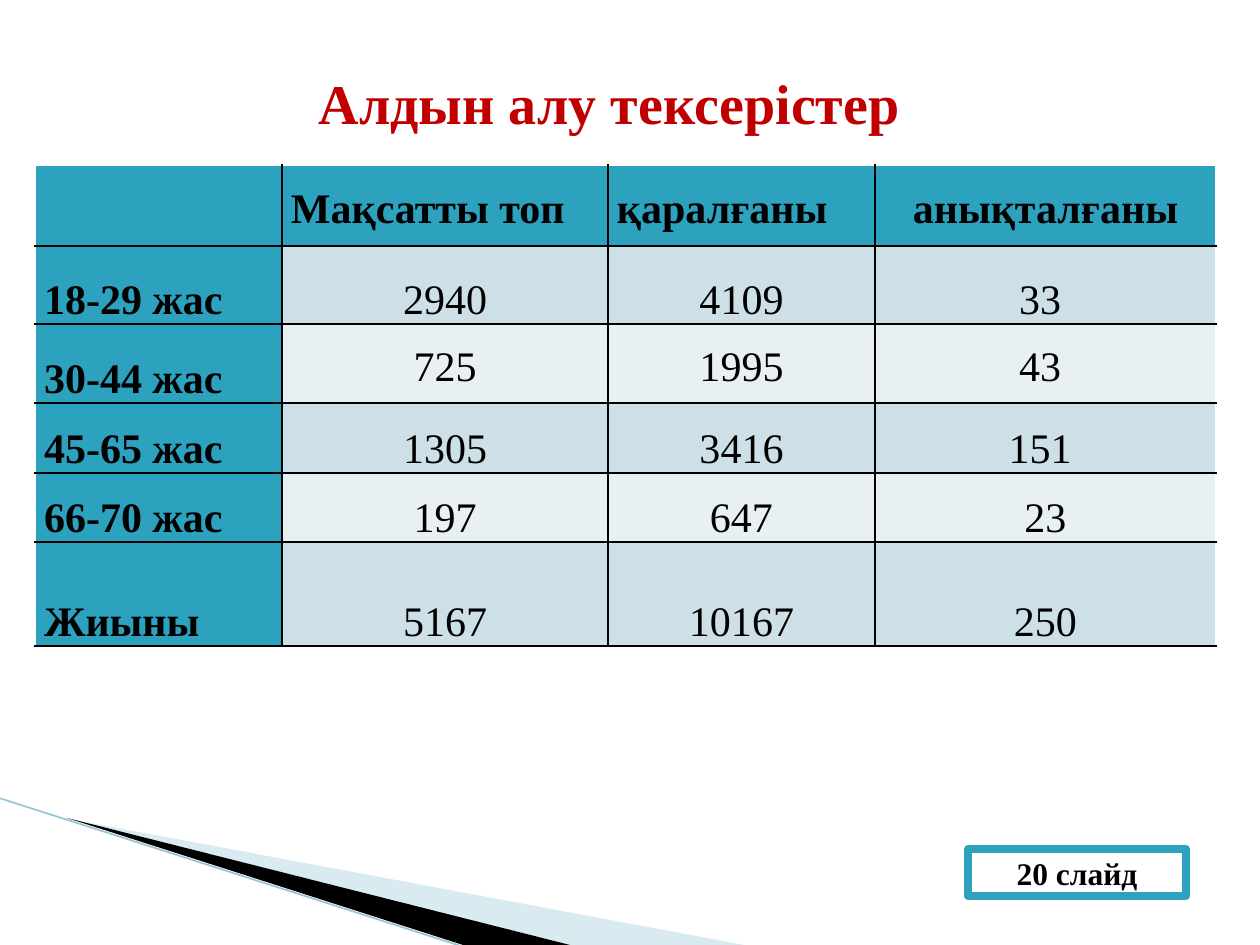
import pptx
import pptx.util
import pptx.dml.color
import pptx.enum.shapes
import pptx.enum.text
import pptx.oxml
import lxml.etree

SCALE = 914400 / 126  # EMU per px
FONT = "Times New Roman"
TEAL, BLACK, WHITE = "2DA2BF", "000000", "FFFFFF"
ALIGN = pptx.enum.text.PP_ALIGN
ANCHOR = pptx.enum.text.MSO_ANCHOR
SHAPE = pptx.enum.shapes.MSO_SHAPE
NS = "http://schemas.openxmlformats.org/drawingml/2006/main"


def px(*lengths):
    return [pptx.util.Emu(round(length * SCALE)) for length in lengths]


def color(value):
    return pptx.dml.color.RGBColor.from_string(value)


deck = pptx.Presentation()
deck.slide_width, deck.slide_height = px(1260, 945)
page = deck.slides.add_slide(deck.slide_layouts[5])

# Corner wedges
wedges = [
    ([(69, 819), (744, 945), (570, 945)], "A0CBDC", 40),
    ([(67, 818), (570, 945), (463, 945)], BLACK, 100),
]
for points, fill, opacity in wedges:
    builder = page.shapes.build_freeform(*points[0], scale=SCALE)
    builder.add_line_segments(points[1:], close=True)
    wedge = builder.convert_to_shape()
    wedge.shadow.inherit = False
    wedge.fill.solid()
    wedge.fill.fore_color.rgb = color(fill)
    wedge.line.fill.background()
    if opacity < 100:
        tint = wedge.fill._xPr.find(f".//{{{NS}}}srgbClr")
        lxml.etree.SubElement(tint, f"{{{NS}}}alpha", val=str(opacity * 1000))

# Edge line along the wedges
edge = page.shapes.add_connector(
    pptx.enum.shapes.MSO_CONNECTOR.STRAIGHT, *px(-1, 798, 467, 948))
edge.line.color.rgb = color("97C5D8")
edge.line.width = pptx.util.Pt(0.95)
lxml.etree.SubElement(edge._element.spPr, f"{{{NS}}}effectLst")

# Title
title = page.shapes.title
title.left, title.top, title.width, title.height = px(54, 20, 1111, 116)
title.text_frame.text = "Алдын алу тексерістер"
title.text_frame.vertical_anchor = ANCHOR.BOTTOM
title.text_frame.margin_bottom = 0
para = title.text_frame.paragraphs[0]
para.alignment = ALIGN.CENTER
span = para.runs[0]
span.font.name = FONT
span.font.size = pptx.util.Pt(32)
span.font.bold = True
span.font.color.rgb = color("C00000")

# Slide number box
box = page.shapes.add_shape(SHAPE.RECTANGLE, *px(968, 849, 218, 47))
box.shadow.inherit = False
box.fill.solid()
box.fill.fore_color.rgb = color(WHITE)
box.line.color.rgb = color(TEAL)
box.line.width = pptx.util.Pt(4.33)
box.text_frame.text = "20 слайд"
box.text_frame.vertical_anchor = ANCHOR.MIDDLE
para = box.text_frame.paragraphs[0]
para.alignment = ALIGN.CENTER
span = para.runs[0]
span.font.name = FONT
span.font.size = pptx.util.Pt(18)
span.font.bold = True
span.font.color.rgb = color(BLACK)

# Screening table
records = [
    ["", "Мақсатты топ", "қаралғаны", "анықталғаны"],
    ["18-29 жас", "2940", "4109", "33 "],
    ["30-44 жас", "725", "1995", "43 "],
    ["45-65 жас", "1305", "3416", "151 "],
    ["66-70 жас", "197", "647", "23"],
    ["Жиыны", "5167", "10167", "250"],
]
widths = [247, 326, 267, 341]
heights = [81, 78, 79, 70, 69, 104]
table = page.shapes.add_table(
    len(heights), len(widths), *px(35, 165, sum(widths), sum(heights))).table
for column, width in zip(table.columns, px(*widths)):
    column.width = width
for row, height in zip(table.rows, px(*heights)):
    row.height = height

last = len(widths) - 1
for r, record in enumerate(records):
    for c, text in enumerate(record):
        cell = table.cell(r, c)
        heading = r == 0 or c == 0

        # Borders are white on the left, top and right outside, black elsewhere
        outside = {"lnL": c == 0, "lnR": c == last, "lnT": r == 0, "lnB": False}
        for side, is_outside in outside.items():
            border = WHITE if is_outside else BLACK
            cell._tc.get_or_add_tcPr().append(pptx.oxml.parse_xml(
                f'<a:{side} xmlns:a="{NS}" w="12700"><a:solidFill>'
                f'<a:srgbClr val="{border}"/></a:solidFill></a:{side}>'))

        cell.fill.solid()
        band = "CDE0E8" if r % 2 else "E8F0F4"
        cell.fill.fore_color.rgb = color(TEAL if heading else band)
        cell.margin_left, cell.margin_right = px(9, 9)
        cell.margin_top = cell.margin_bottom = 0
        middle = r == 0 or (r == 2 and c > 0)
        cell.vertical_anchor = ANCHOR.MIDDLE if middle else ANCHOR.BOTTOM

        cell.text_frame.text = text
        para = cell.text_frame.paragraphs[0]
        centred = c == last or not heading
        para.alignment = ALIGN.CENTER if centred else ALIGN.LEFT
        para.line_spacing = 1.15
        for span in para.runs:
            span.font.name = FONT
            span.font.size = pptx.util.Pt(24)
            span.font.bold = heading
            span.font.color.rgb = color(BLACK)

deck.save("out.pptx")
